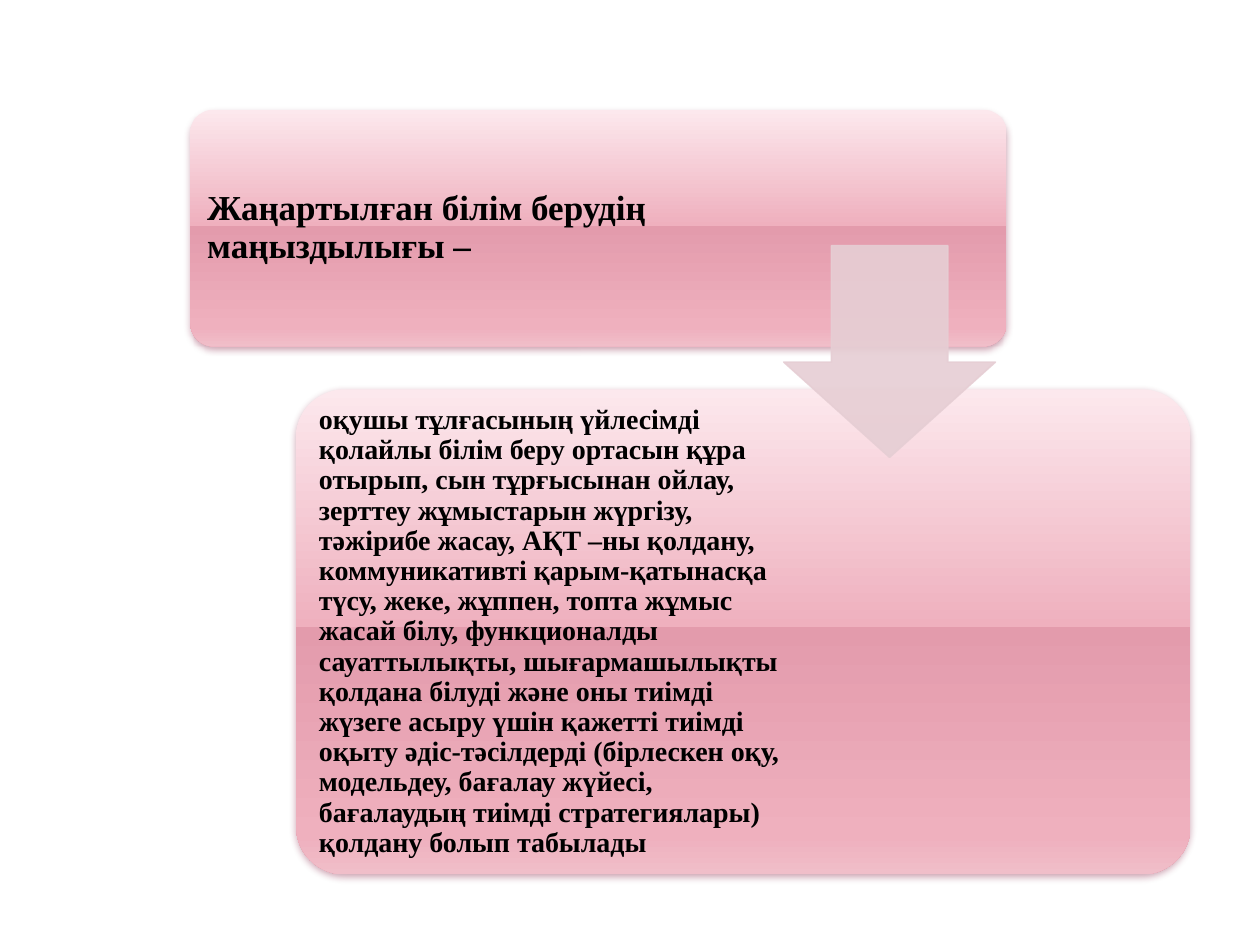
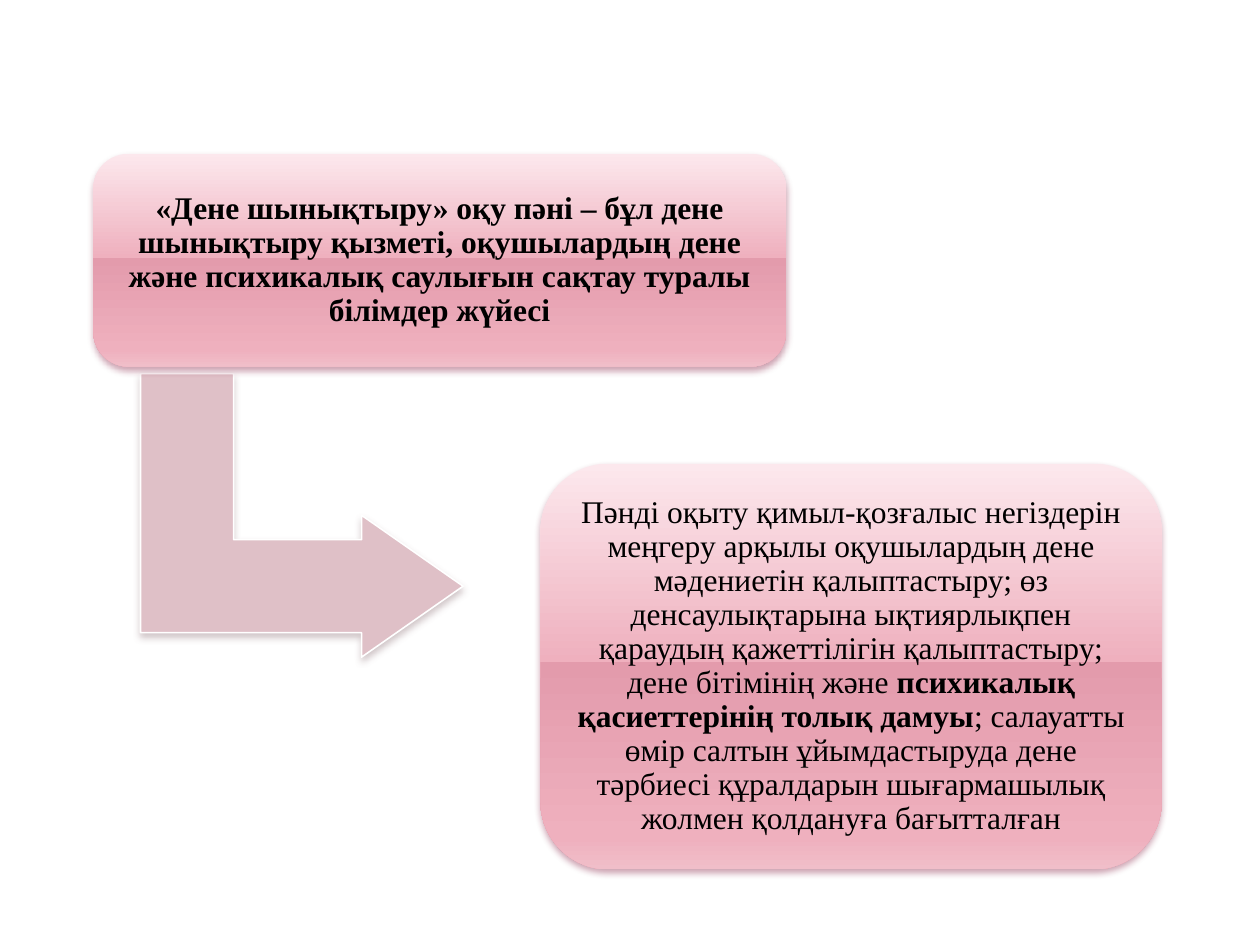
import pptx
import pptx.util
import pptx.dml.color
import pptx.enum.shapes
import pptx.enum.text
import pptx.oxml
import pptx.oxml.ns
from lxml import etree

Inches = pptx.util.Inches
Pt = pptx.util.Pt
SHAPES = pptx.enum.shapes.MSO_SHAPE
ALIGN = pptx.enum.text.PP_ALIGN
qn = pptx.oxml.ns.qn

COLORS = {
    "text": "000000",
    "outline": "FFFFFF",
    "light": "FCE8ED",
    "pink": "EFB0BE",
    "deep": "E39BAC",
    "edge": "F0BEC9",
    "down_arrow": "E6CED4",
    "bent_arrow": "DFC0C7",
    "card_shadow": "7F1238",
    "arrow_shadow": "896D73",
}
GLOSS = [(0, "light"), (49, "pink"), (49, "deep"), (92, "pink"), (100, "edge")]


def rgb(name):
    return pptx.dml.color.RGBColor.from_string(COLORS[name])


def add_alpha(color, percent):
    etree.SubElement(color, qn("a:alpha"), val=str(percent * 1000))


def add_color(parent, name):
    return etree.SubElement(parent, qn("a:srgbClr"), val=COLORS[name])


class Deck:
    font = "Times New Roman"
    corner_inset = 0.29

    def __init__(self):
        self.presentation = pptx.Presentation()
        self.presentation.slide_width = Inches(10)
        self.presentation.slide_height = Inches(7.5)
        self.slide = None

    def new_slide(self):
        self.slide = self.presentation.slides.add_slide(self.presentation.slide_layouts[6])

    def shape(self, kind, box, adjustments, shadow=None):
        shape = self.slide.shapes.add_shape(kind, *map(Inches, box))
        for index, value in enumerate(adjustments):
            shape.adjustments[index] = value
        shape.shadow.inherit = False
        if shadow:
            effects = shape._element.spPr.find(qn("a:effectLst"))
            outer = etree.SubElement(
                effects, qn("a:outerShdw"), blurRad=str(Pt(4)), dist=str(Pt(2)),
                dir="5400000", rotWithShape="0")
            add_alpha(add_color(outer, shadow), 38)
        return shape

    def card(self, box, corner, runs, size, align=ALIGN.LEFT, margin=0.07, text_width=None):
        card = self.shape(SHAPES.ROUNDED_RECTANGLE, box, [corner], "card_shadow")
        card.line.fill.background()
        card.fill.gradient()
        card.fill.gradient_angle = 270
        stops = card._element.spPr.find(qn("a:gradFill")).find(qn("a:gsLst"))
        for stop in list(stops):
            stops.remove(stop)
        for position, name in GLOSS:
            add_color(etree.SubElement(stops, qn("a:gs"), pos=str(position * 1000)), name)

        left, top, width, height = box
        inset = corner * height * self.corner_inset
        text_box = (left + inset, top + inset, text_width or width - 2 * inset, height - 2 * inset)
        self.text(text_box, runs, size, align, margin)

    def text(self, box, runs, size, align, margin):
        frame = self.slide.shapes.add_textbox(*map(Inches, box)).text_frame
        frame.word_wrap = True
        frame.vertical_anchor = pptx.enum.text.MSO_ANCHOR.MIDDLE
        frame.margin_left = frame.margin_right = Inches(margin)
        frame.margin_top = frame.margin_bottom = Inches(margin)
        paragraph = frame.paragraphs[0]
        paragraph.alignment = align
        paragraph.line_spacing = 0.9
        for words, bold in runs:
            run = paragraph.add_run()
            run.text = words
            run.font.name = self.font
            run.font.size = Pt(size)
            run.font.bold = bold
            run.font.color.rgb = rgb("text")

    def arrow(self, kind, box, adjustments, fill, outline, rotation=0, alpha=None, shadow=None):
        arrow = self.shape(kind, box, adjustments, shadow)
        arrow.rotation = rotation
        arrow.fill.solid()
        arrow.fill.fore_color.rgb = rgb(fill)
        arrow.line.color.rgb = rgb(outline)
        arrow.line.width = Pt(0.9)
        if alpha is not None:
            for color in arrow._element.spPr.iter(qn("a:srgbClr")):
                add_alpha(color, alpha)


def importance_slide(deck):
    deck.new_slide()
    topic = [("Жаңартылған білім берудің маңыздылығы –", True)]
    meaning = [(
        "оқушы тұлғасының үйлесімді қолайлы білім беру ортасын құра отырып, "
        "сын тұрғысынан ойлау, зерттеу жұмыстарын жүргізу, тәжірибе жасау, "
        "АҚТ –ны қолдану, коммуникативті қарым-қатынасқа түсу, жеке, жұппен, "
        "топта жұмыс жасай білу, функционалды сауаттылықты, шығармашылықты "
        "қолдана білуді және оны тиімді жүзеге асыру үшін қажетті тиімді оқыту "
        "әдіс-тәсілдерді (бірлескен оқу, модельдеу, бағалау жүйесі, бағалаудың "
        "тиімді стратегиялары) қолдану болып табылады", True)]
    deck.card((1.51, 0.87, 6.48, 1.88), 0.1, topic, 20, margin=0.08, text_width=3.85)
    deck.card((2.35, 3.09, 7.1, 3.85), 0.1, meaning, 16, text_width=3.8)
    deck.arrow(SHAPES.DOWN_ARROW, (6.22, 1.95, 1.68, 1.68), [0.55, 0.45],
               "down_arrow", "down_arrow", alpha=90)


def subject_slide(deck):
    deck.new_slide()
    subject = [(
        "«Дене шынықтыру» оқу пәні – бұл дене шынықтыру қызметі, оқушылардың "
        "дене және психикалық саулығын сақтау туралы білімдер жүйесі", True)]
    goals = [
        ("Пәнді оқыту қимыл-қозғалыс негіздерін меңгеру арқылы оқушылардың дене "
         "мәдениетін қалыптастыру; өз денсаулықтарына ықтиярлықпен қараудың "
         "қажеттілігін қалыптастыру; дене бітімінің және ", False),
        ("психикалық қасиеттерінің толық дамуы", True),
        ("; салауатты өмір салтын ұйымдастыруда дене тәрбиесі құралдарын "
         "шығармашылық жолмен қолдануға бағытталған", False),
    ]
    deck.arrow(SHAPES.BENT_UP_ARROW, (1.27, 2.81, 2.25, 2.56), [0.328, 0.25, 0.358],
               "bent_arrow", "outline", rotation=90, shadow="arrow_shadow")
    deck.card((0.74, 1.22, 5.5, 1.69), 0.167, subject, 18, ALIGN.CENTER)
    deck.card((4.29, 3.68, 4.93, 3.22), 0.167, goals, 18, ALIGN.CENTER)


def main():
    deck = Deck()
    importance_slide(deck)
    subject_slide(deck)
    deck.presentation.save("out.pptx")


if __name__ == "__main__":
    main()
